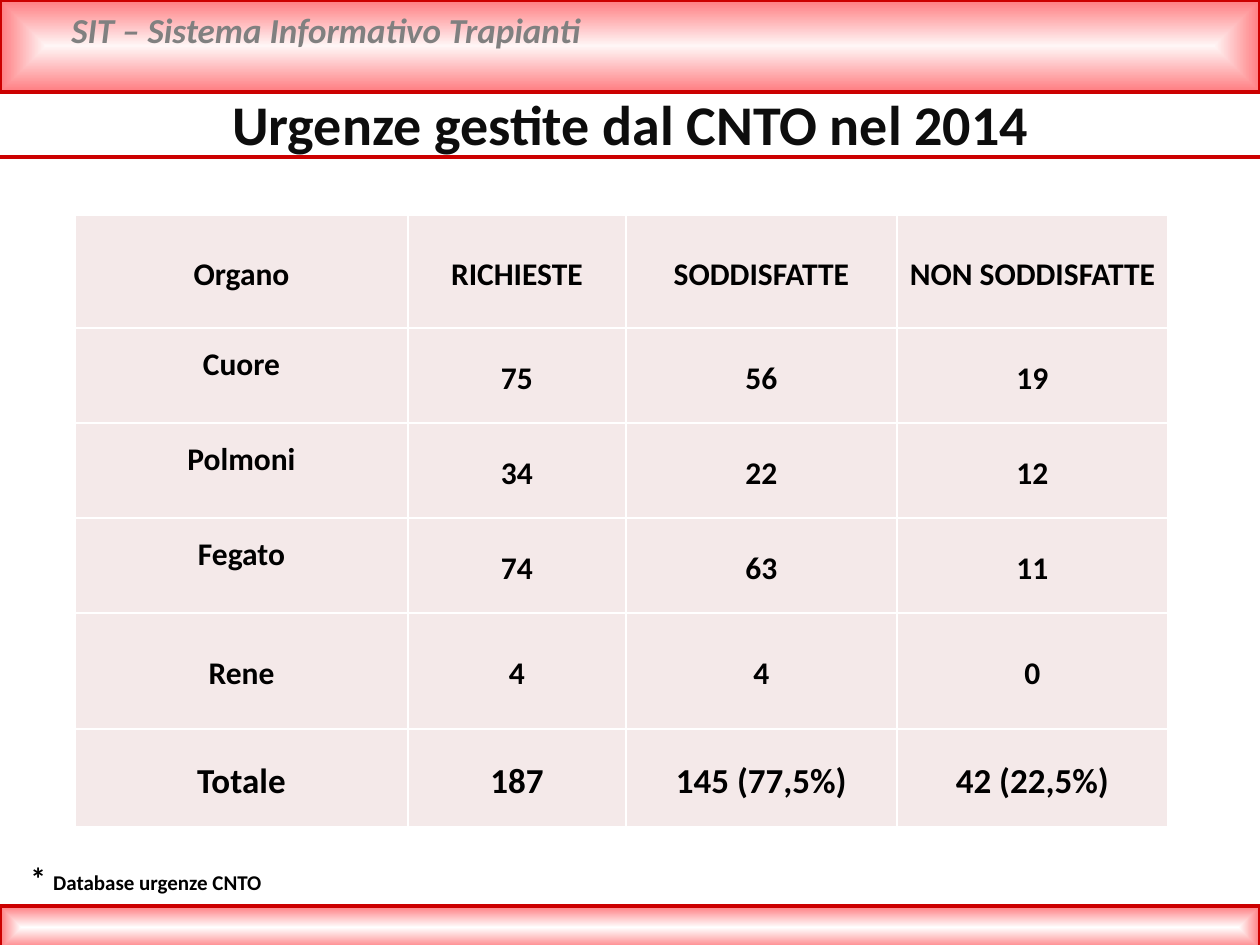
from dataclasses import dataclass

from lxml import etree
from pptx import Presentation, util as u
from pptx.dml.color import RGBColor
from pptx.enum import shapes, text
from pptx.oxml import ns

SLIDE_W, SLIDE_H = 1260, 945


@dataclass(frozen=True)
class Theme:
    font: str = "Calibri"
    red: str = "CC0000"
    pink: str = "FF7C80"
    pale_pink: str = "FFF6F6"
    white: str = "FFFFFF"
    cell: str = "F4E9E9"
    black: str = "000000"
    grey: str = "808080"
    title_ink: str = "0D0D0D"
    title_pt: int = 32
    large_pt: int = 20
    body_pt: int = 18
    note_pt: int = 12
    rule_pt: int = 2
    border_pt: int = 1


THEME = Theme()

URGENT_REQUESTS = [
    ["Organo", "RICHIESTE", "SODDISFATTE", "NON SODDISFATTE"],
    ["Cuore", "75", "56", "19"],
    ["Polmoni", "34", "22", "12"],
    ["Fegato", "74", "63", "11"],
    ["Rene", "4", "4", "0"],
    ["Totale", "187", "145 (77,5%)", "42 (22,5%)"],
]
COLUMN_WIDTHS = [333, 218, 271, 271]
ROW_HEIGHTS = [113, 95, 95, 95, 116, 98]
RAISED_LABELS = {"Cuore", "Polmoni", "Fegato"}


def px(length):
    return u.Emu(round(length * 914400 / 126))


def px_box(box):
    return [px(length) for length in box]


def rgb(color):
    return RGBColor.from_string(color)


def style_run(run, size, color=THEME.black, italic=False):
    run.font.name = THEME.font
    run.font.size = u.Pt(size)
    run.font.bold = True
    run.font.italic = italic
    run.font.color.rgb = rgb(color)


def add_solid_fill(parent, color):
    fill = etree.SubElement(parent, ns.qn("a:solidFill"))
    etree.SubElement(fill, ns.qn("a:srgbClr"), val=color)


def fill_from_centre(shape, inner, outer):
    """Give the shape a gradient that runs from its centre to its outline."""
    shape.fill.gradient()
    for stop, color in zip(shape.fill.gradient_stops, (inner, outer)):
        stop.color.rgb = rgb(color)
    gradient = shape._element.spPr.find(ns.qn("a:gradFill"))
    linear = gradient.find(ns.qn("a:lin"))
    route = etree.Element(ns.qn("a:path"), {"path": "shape"})
    etree.SubElement(route, ns.qn("a:fillToRect"),
                     {side: "50000" for side in "ltrb"})
    gradient.replace(linear, route)


def add_band(slide, box, inner):
    band = slide.shapes.add_shape(shapes.MSO_SHAPE.RECTANGLE, *px_box(box))
    band.shadow.inherit = False
    fill_from_centre(band, inner, THEME.pink)
    band.line.color.rgb = rgb(THEME.red)
    band.line.width = u.Pt(THEME.rule_pt)


def add_text_line(slide, box):
    frame = slide.shapes.add_textbox(*px_box(box)).text_frame
    frame.word_wrap = True
    return frame.paragraphs[0]


def add_header(slide, box):
    left, top, width, _ = box
    add_band(slide, box, THEME.pale_pink)
    system_name = add_text_line(slide, (left + 59, top + 2, width - 128, 55))
    system_name.text = "SIT – Sistema Informativo Trapianti"
    style_run(system_name.runs[0], THEME.large_pt, THEME.grey, italic=True)


def set_title(slide, box):
    title = slide.shapes.title
    title.left, title.top, title.width, title.height = px_box(box)
    frame = title.text_frame
    frame.text = "Urgenze gestite dal CNTO nel 2014"
    frame.vertical_anchor = text.MSO_ANCHOR.TOP
    frame.auto_size = text.MSO_AUTO_SIZE.NONE
    frame.paragraphs[0].alignment = text.PP_ALIGN.CENTER
    style_run(frame.paragraphs[0].runs[0], THEME.title_pt, THEME.title_ink)


def add_title_rule(slide, left, top, width):
    rule = slide.shapes.add_connector(
        shapes.MSO_CONNECTOR.STRAIGHT, *px_box((left, top, left + width, top)))
    rule.line.color.rgb = rgb(THEME.red)
    rule.line.width = u.Pt(THEME.rule_pt)
    etree.SubElement(rule._element.spPr, ns.qn("a:effectLst"))


def set_borders(cell):
    properties = cell._tc.get_or_add_tcPr()
    for position, side in enumerate(("lnL", "lnR", "lnT", "lnB")):
        border = etree.Element(ns.qn(f"a:{side}"),
                               w=str(u.Pt(THEME.border_pt)))
        add_solid_fill(border, THEME.white)
        properties.insert(position, border)


def format_cell(cell, content, size):
    cell.text = content
    cell.fill.solid()
    cell.fill.fore_color.rgb = rgb(THEME.cell)
    set_borders(cell)
    cell.vertical_anchor = text.MSO_ANCHOR.MIDDLE
    cell.margin_left = cell.margin_right = px(10)
    cell.margin_top = 0
    cell.margin_bottom = px(28 if content in RAISED_LABELS else 0)
    paragraph = cell.text_frame.paragraphs[0]
    paragraph.alignment = text.PP_ALIGN.CENTER
    paragraph.line_spacing = 1.15
    style_run(paragraph.runs[0], size)


def add_requests_table(slide, left, top):
    box = (left, top, sum(COLUMN_WIDTHS), sum(ROW_HEIGHTS))
    table = slide.shapes.add_table(
        len(ROW_HEIGHTS), len(COLUMN_WIDTHS), *px_box(box)).table
    table.first_row = table.horz_banding = False
    for column, width in zip(table.columns, COLUMN_WIDTHS):
        column.width = px(width)
    for row, height, organ in zip(table.rows, ROW_HEIGHTS, URGENT_REQUESTS):
        row.height = px(height)
        size = THEME.large_pt if organ[0] == "Totale" else THEME.body_pt
        for cell, content in zip(row.cells, organ):
            format_cell(cell, content, size)


def add_source_note(slide, box):
    note = add_text_line(slide, box)
    for content, size in (("* ", THEME.body_pt),
                          ("Database urgenze CNTO", THEME.note_pt)):
        run = note.add_run()
        run.text = content
        style_run(run, size)


def main():
    deck = Presentation()
    deck.slide_width, deck.slide_height = px(SLIDE_W), px(SLIDE_H)
    slide = deck.slides.add_slide(deck.slide_layouts[5])
    add_header(slide, (0, 0, SLIDE_W, 92))
    add_band(slide, (0, 906, SLIDE_W, 43), THEME.white)
    add_title_rule(slide, 0, 157, SLIDE_W)
    add_requests_table(slide, 75, 215)
    add_source_note(slide, (18, 853, 417, 50))
    set_title(slide, (92, 83, 1077, 81))
    deck.save("out.pptx")


if __name__ == "__main__":
    main()
